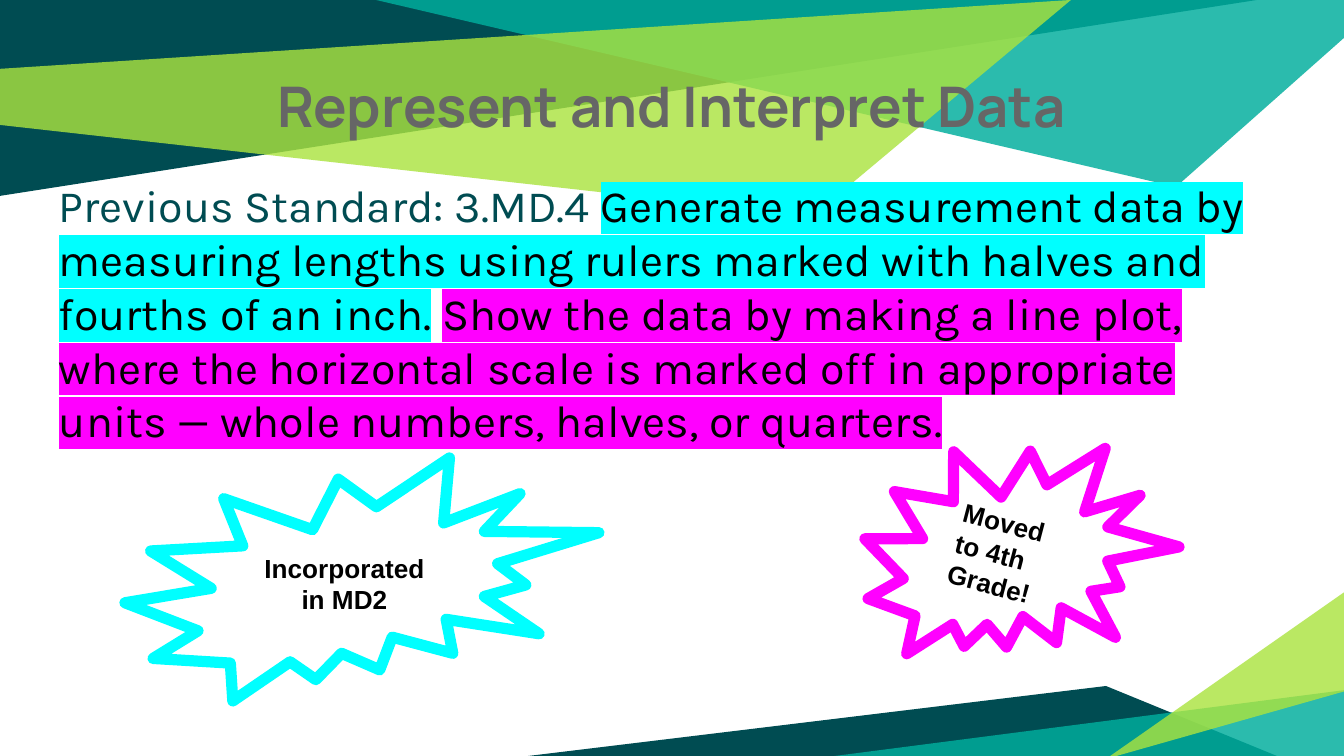
from pptx import Presentation
from pptx.dml.color import RGBColor
from pptx.enum.shapes import MSO_SHAPE
from pptx.enum.text import MSO_ANCHOR, PP_ALIGN
from pptx.oxml.ns import qn
from pptx.util import Emu, Pt
from lxml.etree import SubElement

PX = 9144000 / 1344
COLORS = {"dark": "004C52", "teal": "00AE9D", "lime": "ABE33F", "gray": "666666",
          "black": "000000", "cyan": "00FFFF", "magenta": "FF00FF"}


def box(*lengths):
    return [Emu(round(v * PX)) for v in lengths]


def add_run(p, text, font, size, color, bold=False, highlight=None):
    r = p.add_run()
    r.text = text
    r.font.name, r.font.size, r.font.bold = font, Pt(size), bold
    r.font.color.rgb = RGBColor.from_string(COLORS[color])
    if highlight:
        rPr = r.font._element
        hl = SubElement(rPr, qn("a:highlight"))
        SubElement(hl, qn("a:srgbClr"), val=COLORS[highlight])
        rPr.find(qn("a:solidFill")).addnext(hl)


prs = Presentation()
prs.slide_width, prs.slide_height = box(1344, 756)
s = prs.slides.add_slide(prs.slide_layouts[6])

# Background bands: colour, opacity in percent, corners
bands = [
    ("dark", 100, [(0, 0), (0, 196), (1257, 0)]),
    ("teal", 83, [(376, 0), (1176, 187), (1344, 38), (1344, 0)]),
    ("lime", 81, [(-1, 69), (0, 125), (813, 216), (1071, 0)]),
    ("dark", 100, [(528, 756), (1277, 756), (1106, 686)]),
    ("teal", 83, [(1346, 690), (1346, 759), (812, 759)]),
    ("lime", 81, [(1346, 691), (1346, 591), (1106, 759)]),
]
for color, opacity, points in bands:
    fb = s.shapes.build_freeform(*points[0], scale=PX)
    fb.add_line_segments(points[1:], close=True)
    sp = fb.convert_to_shape()
    sp.shadow.inherit = False
    sp.line.fill.background()
    sp.fill.solid()
    sp.fill.fore_color.rgb = RGBColor.from_string(COLORS[color])
    if opacity < 100:
        clr = sp._element.spPr.find(qn("a:solidFill"))[0]
        SubElement(clr, qn("a:alpha"), val=str(opacity * 1000))

# Title and standard
frames = []
for bounds in [(130, 59, 1083, 126), (46, 165, 1253, 503)]:
    tf = s.shapes.add_textbox(*box(*bounds)).text_frame
    tf.word_wrap = True
    tf.margin_left = tf.margin_right = tf.margin_top = tf.margin_bottom = box(13)[0]
    frames.append(tf)
title, body = frames

p = title.paragraphs[0]
p.alignment = PP_ALIGN.CENTER
add_run(p, "Represent and Interpret Data", "Manrope", 30, "gray", bold=True)

p = body.paragraphs[0]
p.space_before = Pt(6)
p.line_spacing = Pt(28.8)
for text, color, highlight in [
    ("Previous Standard: 3.MD.4 ", "dark", None),
    ("Generate measurement data by measuring lengths using rulers marked with "
     "halves and fourths of an inch.", "black", "cyan"),
    (" ", "black", None),
    ("Show the data by making a line plot, where the horizontal scale is marked off "
     "in appropriate units — whole numbers, halves, or quarters.", "black", "magenta"),
]:
    add_run(p, text, "Karla", 24, color, highlight=highlight)

# Starbursts
for bounds, angle, color, align, text in [
    ((125, 458, 474, 243), 0, "cyan", PP_ALIGN.CENTER, "Incorporated in MD2"),
    ((866, 430, 306, 249), 14.7, "magenta", PP_ALIGN.LEFT, "Moved to 4th Grade!"),
]:
    sp = s.shapes.add_shape(MSO_SHAPE.EXPLOSION2, *box(*bounds))
    sp.rotation = angle
    sp.shadow.inherit = False
    sp.fill.background()
    sp.line.color.rgb = RGBColor.from_string(COLORS[color])
    sp.line.width = Pt(6)
    SubElement(sp._element.spPr.find(qn("a:ln")), qn("a:round"))
    tf = sp.text_frame
    tf.word_wrap = True
    tf.vertical_anchor = MSO_ANCHOR.MIDDLE
    tf.margin_left = tf.margin_right = tf.margin_top = tf.margin_bottom = box(13)[0]
    p = tf.paragraphs[0]
    p.alignment = align
    add_run(p, text, "Arial", 14, "black", bold=True)

prs.save("out.pptx")
